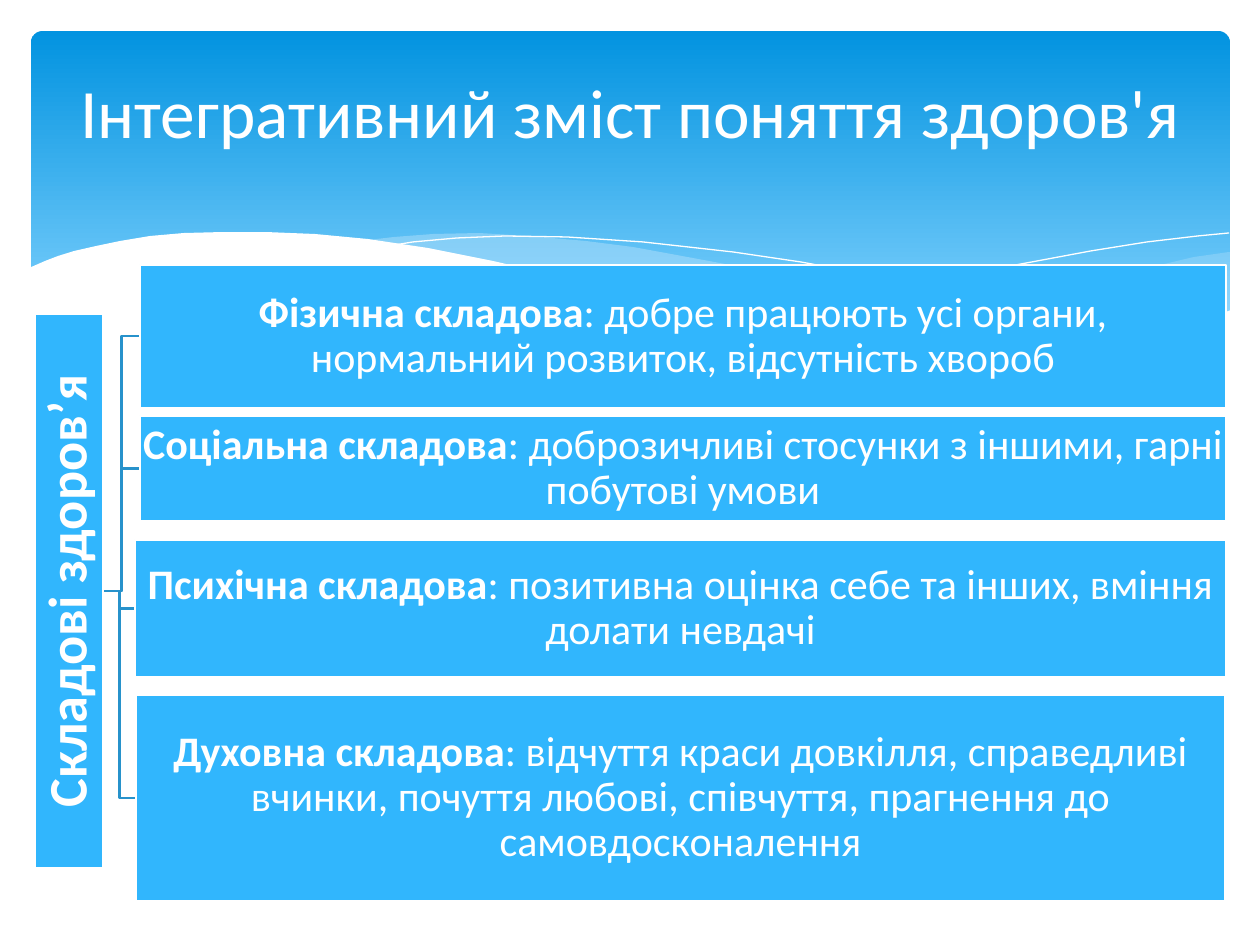
"""Build a slide on the four components of health."""
from pptx import Presentation
from pptx.dml.color import RGBColor
from pptx.enum.shapes import MSO_CONNECTOR, MSO_SHAPE
from pptx.enum.text import MSO_ANCHOR, PP_ALIGN
from pptx.oxml.ns import qn
from pptx.util import Emu, Pt
from lxml.etree import SubElement

SCALE = 914400 / 126
hue = RGBColor.from_string


def px(*nums):
    return [Emu(round(num * SCALE)) for num in nums]


def write(frame, parts, size):
    frame.word_wrap = True
    frame.vertical_anchor = MSO_ANCHOR.MIDDLE
    para = frame.paragraphs[0]
    para.alignment = PP_ALIGN.CENTER
    para.line_spacing = 0.9
    for text, bold in parts:
        run = para.add_run()
        run.text = text
        run.font.name = "Calibri"
        run.font.size = Pt(size)
        run.font.bold = bold
        run.font.color.rgb = hue("FFFFFF")


deck = Presentation()
deck.slide_width, deck.slide_height = px(1260, 945)
slide = deck.slides.add_slide(deck.slide_layouts[5])
shapes = slide.shapes

banner = shapes.add_shape(MSO_SHAPE.ROUNDED_RECTANGLE, *px(31, 31, 1199, 340))
banner.adjustments[0] = 0.034
banner.shadow.inherit = False
banner.line.fill.background()
banner.fill.gradient()
banner.fill.gradient_angle = 270
for stop, place, tint in zip(banner.fill.gradient_stops, (0, 0.9), ("0293E0", "83D3FE")):
    stop.position = place
    stop.color.rgb = hue(tint)

right = [(1229, 252), (1194, 257), (1160, 265), (1123, 272), (1085, 281), (1014, 299),
         (949, 312), (890, 324), (833, 334), (871, 339), (922, 345), (984, 349),
         (1038, 349), (1099, 345), (1150, 336), (1196, 324), (1230, 311), (1230, 252)]
middle = [(1125, 344), (1055, 334), (977, 320), (890, 302), (793, 280), (736, 266),
          (682, 256), (633, 247), (586, 241), (529, 236), (479, 233), (433, 234),
          (394, 237), (360, 241), (407, 247), (456, 256), (509, 266), (566, 280),
          (668, 302), (757, 321), (838, 335), (910, 345), (974, 349), (1031, 350),
          (1080, 349)]
crest = [(389, 246), (413, 242), (457, 238), (505, 236), (567, 237), (643, 242),
         (733, 252), (801, 262), (876, 276), (958, 294), (1047, 316), (1143, 343)]
rise = [(772, 324), (823, 310), (876, 296), (942, 281), (1016, 265), (1091, 251),
        (1147, 242), (1198, 236), (1229, 233)]
front = [(1231, 310), (1197, 323), (1159, 334), (1118, 341), (1071, 347), (1019, 349),
         (959, 347), (892, 340), (816, 330), (730, 315), (634, 294), (563, 277),
         (493, 261), (428, 248), (368, 239), (315, 234), (266, 232), (223, 232),
         (184, 233), (150, 236), (120, 241), (96, 246), (74, 251), (58, 256),
         (45, 261), (29, 268), (29, 415), (1231, 415)]
waves = [(right, "C6E7FC", 29), (middle, "C6E7FC", 40), (crest, None, 100),
         (rise, None, 100), (front, "FFFFFF", 100)]
for points, tint, alpha in waves:
    pen = shapes.build_freeform(*points[0], scale=SCALE)
    pen.add_line_segments(points[1:], close=tint is not None)
    wave = pen.convert_to_shape()
    wave.shadow.inherit = False
    if tint:
        wave.line.fill.background()
        wave.fill.solid()
        wave.fill.fore_color.rgb = hue(tint)
        if alpha < 100:
            shade = wave.fill._xPr.find(qn("a:solidFill"))[0]
            SubElement(shade, qn("a:alpha")).set("val", str(alpha * 1000))
    else:
        wave.fill.background()
        wave.line.color.rgb = hue("FFFFFF")
        wave.line.width = Pt(0)

title = shapes.title
shapes._spTree.append(title._element)
title.left, title.top, title.width, title.height = px(63, 47, 1134, 139)
write(title.text_frame, [("Інтегративний зміст поняття здоров'я", False)], 39.6)

rows = [
    (140, 265, 1086, 143, "Фізична складова",
     ": добре працюють усі органи, нормальний розвиток, відсутність хвороб"),
    (140, 416, 1086, 105, "Соціальна складова",
     ": доброзичливі стосунки з іншими, гарні побутові умови"),
    (135, 540, 1091, 137, "Психічна складова",
     ": позитивна оцінка себе та інших, вміння долати невдачі"),
    (136, 695, 1089, 206, "Духовна складова",
     ": відчуття краси довкілля, справедливі вчинки, почуття любові, "
     "співчуття, прагнення до самовдосконалення"),
]
for left, top, width, height, name, rest in reversed(rows):
    link = shapes.add_connector(MSO_CONNECTOR.ELBOW, *px(103, 591, left, top + height / 2))
    link.line.color.rgb = hue("2792CB")
    link.line.width = Pt(1.25)
    SubElement(link._element.spPr, qn("a:effectLst"))

boxes = [(-208, 557, 554, 68, 270, 31, [("Складові здоров’я", True)])]
boxes += [(*row[:4], 0, 24, [(row[4], True), (row[5], False)]) for row in rows]
for left, top, width, height, turn, size, parts in boxes:
    box = shapes.add_shape(MSO_SHAPE.RECTANGLE, *px(left, top, width, height))
    box.rotation = turn
    box.shadow.inherit = False
    box.fill.solid()
    box.fill.fore_color.rgb = hue("31B6FD")
    box.line.color.rgb = hue("FFFFFF")
    box.line.width = Pt(1.25)
    frame = box.text_frame
    frame.margin_left, frame.margin_top, frame.margin_right, frame.margin_bottom = px(2, 2, 2, 2)
    write(frame, parts, size)

deck.save("out.pptx")
